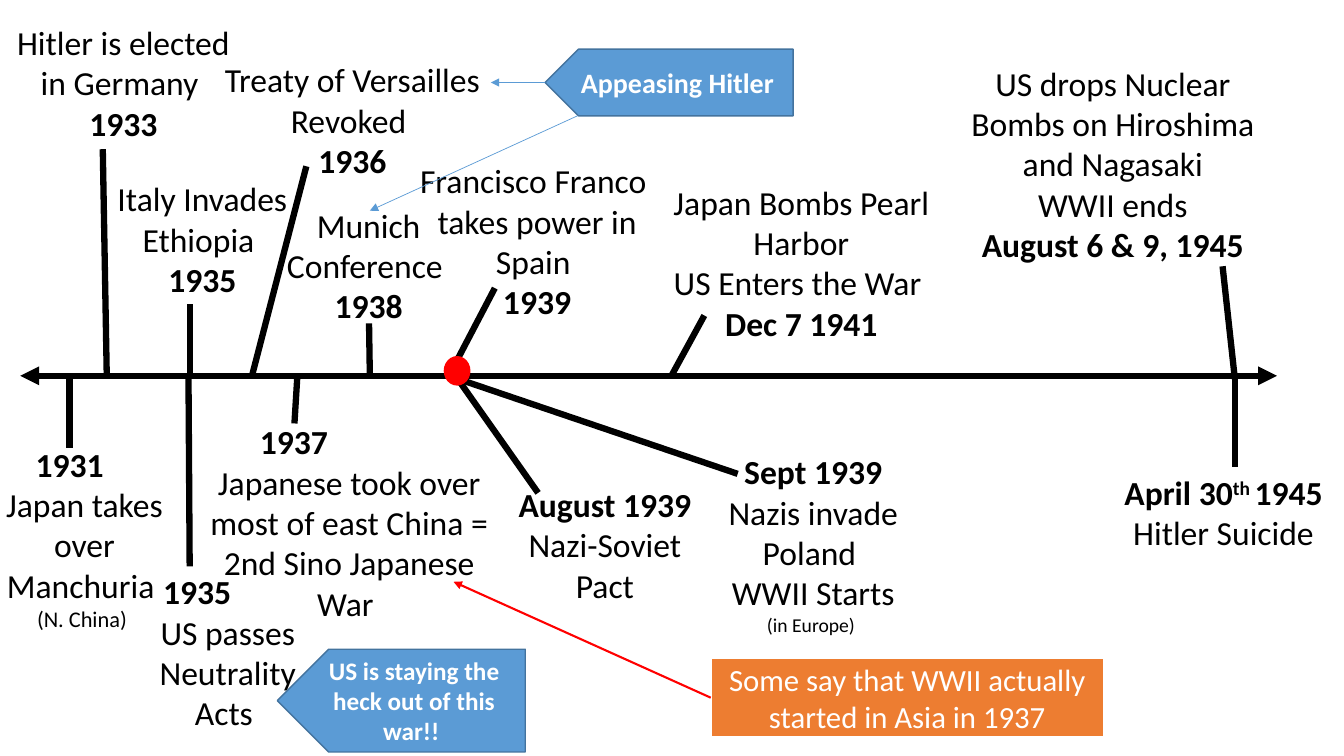
from dataclasses import dataclass
from typing import NamedTuple

from lxml import etree
from pptx import Presentation
from pptx.dml.color import RGBColor
from pptx.enum.shapes import MSO_CONNECTOR, MSO_SHAPE
from pptx.enum.text import MSO_ANCHOR, MSO_AUTO_SIZE, PP_ALIGN
from pptx.oxml.ns import qn
from pptx.util import Cm, Pt

FONT = "Calibri"
COLORS = {
    "ink": "000000",
    "white": "FFFFFF",
    "callout": "5B9BD5",
    "callout_edge": "43739E",
    "claim": "ED7D31",
    "war": "FF0000",
}
AXIS_Y = 9.47
AXIS_WIDTH = 4.5


class Run(NamedTuple):
    text: str
    size: int = 0
    raised: bool = False


@dataclass
class Line:
    runs: tuple
    bold: bool = False
    size: int = 24
    indent: float = 0


@dataclass
class Event:
    box: tuple
    tick: tuple
    lines: list


def date(*runs, indent=0):
    """A bold line; with an indent it is left-aligned instead of centred."""
    return Line(runs, bold=True, indent=indent)


def fact(*runs, size=24):
    return Line(runs, size=size)


EVENTS = [
    Event((-0.51, 11.05, 5.28, 5.38), (1.75, 9.55, 1.75, 11.28),
          [date("1931", indent=1.16), fact("Japan takes over Manchuria "),
           fact("(N. China) ", size=16)]),
    Event((4.95, 10.49, 7.7, 5.38), (7.49, 9.53, 7.42, 10.67),
          [date("1937", indent=1.35),
           fact("Japanese took over most of east China = 2nd Sino Japanese War ")]),
    Event((2.46, 4.37, 5.28, 3.33), (4.78, 7.67, 4.78, 9.4),
          [fact("Italy Invades Ethiopia "), date("1935")]),
    Event((-0.05, 0.43, 6.32, 3.33), (2.59, 3.76, 2.69, 9.45),
          [fact("Hitler is elected in Germany "), date("1933")]),
    Event((4.45, 1.37, 8.86, 3.33), (7.72, 4.19, 6.35, AXIS_Y),
          [fact("Treaty of Versailles Revoked "), date("1936")]),
    Event((3.1, 14.27, 5.28, 4.37), (4.75, 9.5, 4.78, 14.27),
          [date("1935", indent=0.76), fact("US passes Neutrality Acts ")]),
    Event((9.93, 3.91, 7.21, 4.37), (12.47, 7.26, 11.35, 9.4),
          [fact("Francisco Franco "), fact("takes power in Spain "), date("1939")]),
    Event((6.05, 5.03, 6.48, 3.33), (9.32, 9.45, 9.3, 8.15),
          [fact("Munich Conference "), date("1938")]),
    Event((12.78, 12.07, 4.93, 3.33), (11.43, 9.4, 13.56, 12.42),
          [date("August 1939"), fact("Nazi-Soviet Pact")]),
    Event((18.03, 11.25, 4.93, 4.95), (11.4, 9.5, 18.59, 11.94),
          [date("Sept 1939"), fact("Nazis invade Poland "),
           fact("WWII Starts ", Run("(in Europe) ", 14))]),
    Event((16.36, 4.45, 7.67, 4.37), (16.92, AXIS_Y, 17.75, 7.95),
          [fact("Japan Bombs Pearl Harbor"), fact("US Enters the War "),
           date("Dec 7 1941")]),
    Event((27, 11.76, 7.67, 2.31), (31.12, 11.76, 31.12, AXIS_Y),
          [date("April 30", Run("th ", raised=True), "1945"), fact("Hitler Suicide")]),
    Event((24.21, 1.45, 7.67, 5.38), (31.12, 9.55, 30.81, 6.71),
          [fact("US drops Nuclear Bombs on Hiroshima and Nagasaki"),
           fact("WWII ends"), date("August 6 & 9, 1945")]),
]


def rgb(name):
    return RGBColor.from_string(COLORS[name])


def cms(values):
    return [Cm(value) for value in values]


def style_font(font, size, color, bold=False):
    font.name = FONT
    font.size = Pt(size)
    font.bold = bold
    font.color.rgb = rgb(color)


def add_line(slide, ends, color="ink", width=AXIS_WIDTH, arrows=()):
    """Draw a straight line; arrows lists "headEnd" and/or "tailEnd"."""
    line = slide.shapes.add_connector(MSO_CONNECTOR.STRAIGHT, *cms(ends))
    line.line.color.rgb = rgb(color)
    line.line.width = Pt(width)
    properties = line._element.spPr
    for end in arrows:
        etree.SubElement(properties.find(qn("a:ln")), qn("a:" + end), type="triangle")
    etree.SubElement(properties, qn("a:effectLst"))
    return line


def write_line(paragraph, line):
    style_font(paragraph.font, line.size, "ink", line.bold)
    if line.indent:
        paragraph.alignment = PP_ALIGN.LEFT
        paragraph._p.get_or_add_pPr().set("marL", str(Cm(line.indent)))
    else:
        paragraph.alignment = PP_ALIGN.CENTER
    for part in line.runs:
        part = part if isinstance(part, Run) else Run(part)
        run = paragraph.add_run()
        run.text = part.text
        if part.size:
            run.font.size = Pt(part.size)
        if part.raised:
            run.font._element.set("baseline", "30000")


def add_event(slide, event):
    add_line(slide, event.tick)
    frame = slide.shapes.add_textbox(*cms(event.box)).text_frame
    frame.word_wrap = True
    frame.auto_size = MSO_AUTO_SIZE.SHAPE_TO_FIT_TEXT
    for number, line in enumerate(event.lines):
        write_line(frame.add_paragraph() if number else frame.paragraphs[0], line)


def add_filled(slide, kind, box, fill, edge, edge_width=1):
    shape = slide.shapes.add_shape(kind, *cms(box))
    shape.shadow.inherit = False
    shape.fill.solid()
    shape.fill.fore_color.rgb = rgb(fill)
    shape.line.color.rgb = rgb(edge)
    shape.line.width = Pt(edge_width)
    return shape


def label(shape, text, size, bold=False):
    frame = shape.text_frame
    frame.word_wrap = True
    frame.vertical_anchor = MSO_ANCHOR.MIDDLE
    paragraph = frame.paragraphs[0]
    paragraph.text = text
    paragraph.alignment = PP_ALIGN.CENTER
    style_font(paragraph.font, size, "white", bold)


def add_callout(slide, box, text, size):
    """Add a pentagon that points left."""
    callout = add_filled(slide, MSO_SHAPE.PENTAGON, box, "callout", "callout_edge")
    callout._element.spPr.xfrm.set("flipH", "1")
    label(callout, text, size, bold=True)


def main():
    deck = Presentation()
    deck.slide_width, deck.slide_height = Cm(33.87), Cm(19.05)
    slide = deck.slides.add_slide(deck.slide_layouts[6])

    add_line(slide, (0.51, AXIS_Y, 32.18, AXIS_Y), arrows=("headEnd", "tailEnd"))
    for event in EVENTS:
        add_event(slide, event)
    add_filled(slide, MSO_SHAPE.OVAL, (11.2, 8.99, 0.64, 0.71), "war", "war")

    add_callout(slide, (13.74, 1.24, 6.25, 1.68), "Appeasing Hitler", 20)
    add_callout(slide, (6.99, 16.36, 6.25, 2.59),
                "US is staying the heck out of this war!! ", 18)
    for ends in ((13.74, 2.08, 12.37, 2.08), (14.55, 2.92, 9.32, 5.31)):
        add_line(slide, ends, "callout", 0.5, ("tailEnd",))

    claim = add_filled(slide, MSO_SHAPE.RECTANGLE, (17.91, 16.59, 9.91, 1.98),
                       "claim", "white", 1.5)
    label(claim, "Some say that WWII actually started in Asia in 1937", 22)
    claim_arrow = add_line(slide, (17.91, 17.58, 11.43, 14.66), "war", 1.5, ("tailEnd",))
    claim_arrow.begin_connect(claim, 1)

    deck.save("out.pptx")


if __name__ == "__main__":
    main()
